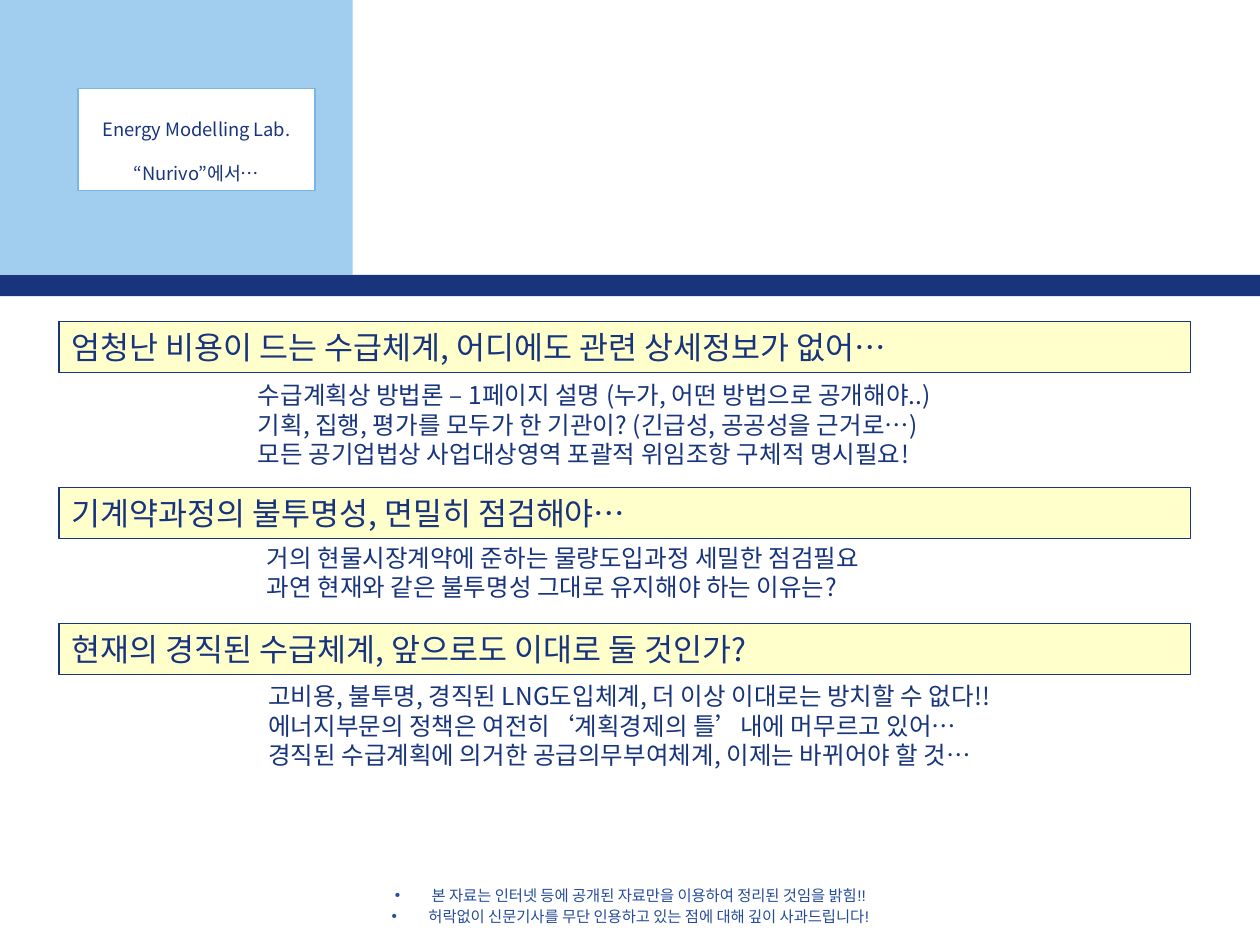
import pptx
import pptx.dml.color
import pptx.enum.shapes
import pptx.enum.text
import pptx.oxml.ns
import pptx.util
from dataclasses import dataclass
from lxml import etree

Cm = pptx.util.Cm
Pt = pptx.util.Pt
ALIGN = pptx.enum.text.PP_ALIGN
ANCHOR = pptx.enum.text.MSO_ANCHOR


@dataclass(frozen=True)
class Theme:
    navy: str = "17347D"
    sky: str = "77B7E7"
    cream: str = "FFFFCC"
    white: str = "FFFFFF"
    notice_blue: str = "264C99"
    font: str = "Noto Sans CJK KR"
    notice_font: str = "Arial"
    heading_size: float = 18
    point_size: float = 14
    label_size: float = 10.5
    notice_size: float = 8.8
    line_height: float = 1.2


class SlideBuilder:
    def __init__(self, slide, theme):
        self.slide = slide
        self.theme = theme

    def paint(self, shape, fill, line=None):
        shape.fill.solid()
        shape.fill.fore_color.rgb = pptx.dml.color.RGBColor.from_string(fill)
        if line:
            shape.line.color.rgb = pptx.dml.color.RGBColor.from_string(line)
            shape.line.width = Pt(0.75)
        else:
            shape.line.fill.background()

    def set_text(self, shape, lines, size, align=ALIGN.LEFT, anchor=ANCHOR.TOP,
                 gap=0, color=None, font=None, hanging=None):
        frame = shape.text_frame
        frame.word_wrap = True
        frame.auto_size = pptx.enum.text.MSO_AUTO_SIZE.NONE
        frame.vertical_anchor = anchor
        frame.text = "\n".join(lines)
        for index, paragraph in enumerate(frame.paragraphs):
            paragraph.alignment = align
            paragraph.line_spacing = Pt(size * self.theme.line_height)
            paragraph.space_before = Pt(gap if index else 0)
            properties = paragraph._p.get_or_add_pPr()
            if hanging:
                properties.set("marL", str(hanging))
                properties.set("indent", str(-hanging))
                bullet = etree.SubElement(properties, pptx.oxml.ns.qn("a:buChar"))
                bullet.set("char", "•")
            paragraph.font.size = Pt(size)
            paragraph.font.name = font or self.theme.font
            paragraph.font.color.rgb = pptx.dml.color.RGBColor.from_string(
                color or self.theme.navy)
            # Korean glyphs take the East Asian typeface
            latin = properties.find(".//" + pptx.oxml.ns.qn("a:latin"))
            east_asian = etree.Element(pptx.oxml.ns.qn("a:ea"))
            east_asian.set("typeface", self.theme.font)
            latin.addnext(east_asian)

    def block(self, left, top, width, height, fill, line=None, opacity=None):
        block = self.slide.shapes.add_shape(
            pptx.enum.shapes.MSO_SHAPE.RECTANGLE,
            Cm(left), Cm(top), Cm(width), Cm(height))
        block.shadow.inherit = False
        self.paint(block, fill, line)
        if opacity:
            color = block.element.spPr.find(".//" + pptx.oxml.ns.qn("a:srgbClr"))
            alpha = etree.SubElement(color, pptx.oxml.ns.qn("a:alpha"))
            alpha.set("val", str(opacity * 1000))
        return block

    def heading(self, top, text):
        bar = self.block(1.19, top, 22.81, 1.03, self.theme.cream, self.theme.navy)
        self.set_text(bar, [text], self.theme.heading_size, anchor=ANCHOR.MIDDLE)

    def points(self, left, top, lines):
        box = self.slide.shapes.add_textbox(
            Cm(left), Cm(top), Cm(18.85), Cm(0.25 + 0.6 * len(lines)))
        self.set_text(box, lines, self.theme.point_size)

    def place(self, placeholder, left, top, width, height):
        placeholder.left, placeholder.top = Cm(left), Cm(top)
        placeholder.width, placeholder.height = Cm(width), Cm(height)
        # Bring it in front of the background blocks
        self.slide.shapes.element.append(placeholder.element)
        return placeholder

    def label(self, lines):
        label = self.place(self.slide.shapes.title, 1.57, 1.78, 4.78, 2.06)
        self.paint(label, self.theme.white, self.theme.sky)
        size = self.theme.label_size
        self.set_text(label, lines, size, ALIGN.CENTER, ANCHOR.BOTTOM,
                      gap=size * self.theme.line_height)

    def notice(self, lines):
        notice = self.place(self.slide.placeholders[1], 0.71, 17.73, 24, 0.99)
        size = self.theme.notice_size
        self.set_text(notice, lines, size, ALIGN.CENTER, gap=size * 0.2,
                      color=self.theme.notice_blue, font=self.theme.notice_font,
                      hanging=Cm(0.74))


# Heading top, list left, list top, heading, points
SECTIONS = [
    (6.48, 4.95, 7.54, "엄청난 비용이 드는 수급체계, 어디에도 관련 상세정보가 없어…", [
        "수급계획상 방법론 – 1페이지 설명 (누가, 어떤 방법으로 공개해야..)",
        "기획, 집행, 평가를 모두가 한 기관이? (긴급성, 공공성을 근거로…)",
        "모든 공기업법상 사업대상영역 포괄적 위임조항 구체적 명시필요!"]),
    (9.83, 5.13, 10.82, "기계약과정의 불투명성, 면밀히 점검해야…", [
        "거의 현물시장계약에 준하는 물량도입과정 세밀한 점검필요",
        "과연 현재와 같은 불투명성 그대로 유지해야 하는 이유는?"]),
    (12.57, 5.16, 13.61, "현재의 경직된 수급체계, 앞으로도 이대로 둘 것인가?", [
        "고비용, 불투명, 경직된 LNG도입체계, 더 이상 이대로는 방치할 수 없다!!",
        "에너지부문의 정책은 여전히‘계획경제의 틀’내에 머무르고 있어…",
        "경직된 수급계획에 의거한 공급의무부여체계, 이제는 바뀌어야 할 것…"]),
]


def main():
    deck = pptx.Presentation()
    deck.slide_width, deck.slide_height = Cm(25.4), Cm(19.05)
    theme = Theme()
    builder = SlideBuilder(deck.slides.add_slide(deck.slide_layouts[1]), theme)

    # Header blocks
    builder.block(0, 0, 7.11, 5.54, theme.sky, opacity=69)
    builder.block(0, 5.54, 25.4, 0.43, theme.navy)

    # Source label
    builder.label(["Energy Modelling Lab.", "“Nurivo”에서…"])

    # Arguments
    for heading_top, list_left, list_top, heading, lines in SECTIONS:
        builder.heading(heading_top, heading)
        builder.points(list_left, list_top, lines)

    # Closing notice
    builder.notice([
        "본 자료는 인터넷 등에 공개된 자료만을 이용하여 정리된 것임을 밝힘!!",
        "허락없이 신문기사를 무단 인용하고 있는 점에 대해 깊이 사과드립니다!"])

    deck.save("out.pptx")


if __name__ == "__main__":
    main()
